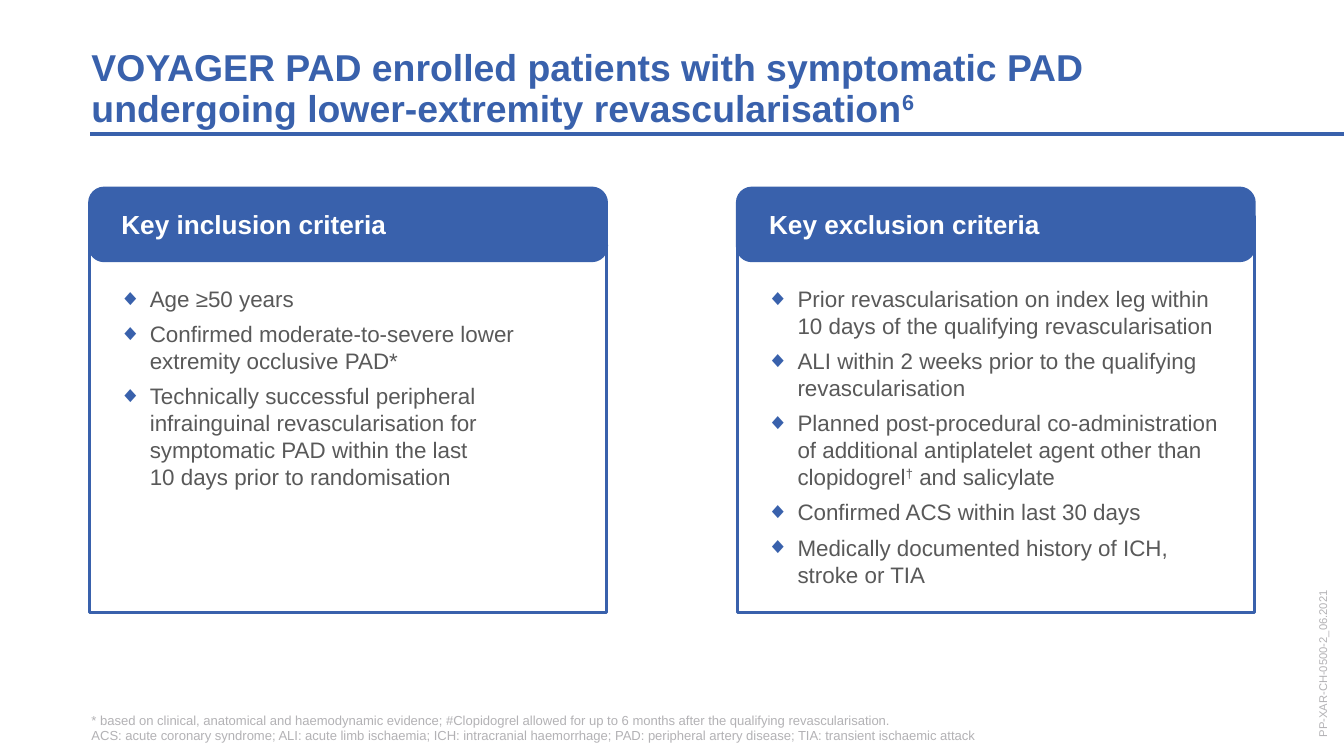
from lxml import etree
from pptx import Presentation
from pptx.dml.color import RGBColor
from pptx.enum.shapes import MSO_CONNECTOR, MSO_SHAPE
from pptx.enum.text import MSO_ANCHOR
from pptx.oxml.ns import qn
from pptx.util import Pt

ROUND_RECT, RECT = MSO_SHAPE.ROUNDED_RECTANGLE, MSO_SHAPE.RECTANGLE
STRAIGHT = MSO_CONNECTOR.STRAIGHT
TOP, MIDDLE, BOTTOM = MSO_ANCHOR.TOP, MSO_ANCHOR.MIDDLE, MSO_ANCHOR.BOTTOM
FONT = "Arial"
BLUE, WHITE, TEXT, GREY = "3961AC", "FFFFFF", "595959", "B3B2B5"

# A paragraph is a list of runs; "\n" breaks the line, "^" marks superscript
INCLUSION = [
    ["Age ≥50 years"],
    ["Confirmed moderate-to-severe lower extremity occlusive PAD*"],
    ["Technically successful peripheral", "\n",
     "infrainguinal revascularisation for symptomatic PAD within the last", "\n",
     "10 days prior to randomisation"],
]
EXCLUSION = [
    ["Prior revascularisation on index leg within", "\n",
     "10 days of the qualifying revascularisation"],
    ["ALI within 2 weeks prior to the qualifying revascularisation"],
    ["Planned post-procedural co-administration of additional antiplatelet "
     "agent other than clopidogrel", "^†", " and salicylate"],
    ["Confirmed ACS within last 30 days"],
    ["Medically documented history of ICH, stroke or TIA"],
]
FOOTNOTES = [
    ["* based on clinical, anatomical and haemodynamic evidence; #Clopidogrel "
     "allowed for up to 6 months after the qualifying revascularisation."],
    ["ACS: acute coronary syndrome; ALI: acute limb ischaemia; ICH: intracranial "
     "haemorrhage; PAD: peripheral artery disease; TIA: transient ischaemic attack"],
]


def rgb(value):
    return RGBColor.from_string(value)


def add_runs(p, runs, size, color, bold=False):
    for text in runs:
        if text == "\n":
            p.add_line_break()
            continue
        r = p.add_run()
        r.text = text.lstrip("^")
        r.font.name, r.font.size, r.font.bold = FONT, Pt(size), bold
        r.font.color.rgb = rgb(color)
        if text.startswith("^"):
            r.font._element.set("baseline", "30000")


def add_text(s, box, paragraphs, size, color, bold=False, anchor=TOP,
             inset=(0, 0), wrap=True):
    sp = s.shapes.add_textbox(*map(Pt, box))
    tf = sp.text_frame
    tf.word_wrap, tf.vertical_anchor = wrap, anchor
    tf.margin_left = tf.margin_right = Pt(inset[0])
    tf.margin_top = tf.margin_bottom = Pt(inset[1])
    for i, runs in enumerate(paragraphs):
        p = tf.add_paragraph() if i else tf.paragraphs[0]
        add_runs(p, runs, size, color, bold)
    return sp


def add_bullet(p):
    p.space_after = Pt(4.5)
    pPr = p._p.get_or_add_pPr()
    pPr.set("marL", str(Pt(16.5)))
    pPr.set("indent", str(-Pt(16.5)))
    color = etree.SubElement(pPr, qn("a:buClr"))
    etree.SubElement(color, qn("a:srgbClr"), val=BLUE)
    etree.SubElement(pPr, qn("a:buFont"), typeface=FONT)
    etree.SubElement(pPr, qn("a:buChar"), char="◆")


def add_box(s, kind, box, fill=None):
    sp = s.shapes.add_shape(kind, *map(Pt, box))
    sp.shadow.inherit = False
    if fill:
        sp.fill.solid()
        sp.fill.fore_color.rgb = rgb(fill)
    else:
        sp.fill.background()
    sp.line.color.rgb, sp.line.width = rgb(BLUE), Pt(1.5)
    return sp


def title_region(s, x, y, w, h):
    sp = add_text(s, (x, y, w, h),
                  [["VOYAGER PAD enrolled patients with symptomatic PAD", "\n",
                    "undergoing lower-extremity revascularisation", "^6"]],
                  20, BLUE, bold=True, anchor=BOTTOM)
    sp.text_frame.paragraphs[0].line_spacing = 0.9
    # Rule below the title, running to the slide's edge
    rule_y = y + h + 2.25
    rule = s.shapes.add_connector(STRAIGHT, Pt(x - 0.75), Pt(rule_y),
                                  Pt(720), Pt(rule_y))
    rule.line.color.rgb, rule.line.width = rgb(BLUE), Pt(2.25)
    etree.SubElement(rule._element.spPr, qn("a:effectLst"))


def criteria_panel(s, x, y, w, h, heading, criteria):
    # Header bar and frame
    head_h, frame_top, body_top = 39, 15, 49.25
    header = add_box(s, ROUND_RECT, (x, y, w, head_h), BLUE)
    header.adjustments[0] = 0.2
    add_box(s, RECT, (x, y + frame_top, w, h - frame_top))
    # Heading and bulleted criteria
    add_text(s, (x + 6, y, w - 12, head_h), [[heading]], 14, WHITE,
             bold=True, anchor=MIDDLE, inset=(11, 3.6))
    sp = add_text(s, (x + 10.5, y + body_top, w - 20.5, h - body_top), criteria,
                  12, TEXT, inset=(5.25, 2.75))
    for p in sp.text_frame.paragraphs:
        add_bullet(p)


def footer_region(s, x, y, w, h):
    add_text(s, (x, y, w, h), FOOTNOTES, 7, GREY, anchor=BOTTOM)
    # Document code, reading upwards along the right edge
    code = add_text(s, (x + 609, y - 47.5, 101, 22), [["PP-XAR-CH-0500-2_06.2021"]],
                    6, GREY, anchor=MIDDLE, wrap=False)
    code.rotation = 270


def main():
    prs = Presentation()
    prs.slide_width, prs.slide_height = Pt(720), Pt(405)
    s = prs.slides.add_slide(prs.slide_layouts[6])
    title_region(s, 49, 25.75, 651.5, 44)
    panels = [("Key inclusion criteria", INCLUSION),
              ("Key exclusion criteria", EXCLUSION)]
    for i, (heading, criteria) in enumerate(panels):
        criteria_panel(s, 48 + i * 347, 100.75, 277, 227.5, heading, criteria)
    footer_region(s, 49, 381, 651.5, 17.25)
    prs.save("out.pptx")


if __name__ == "__main__":
    main()
